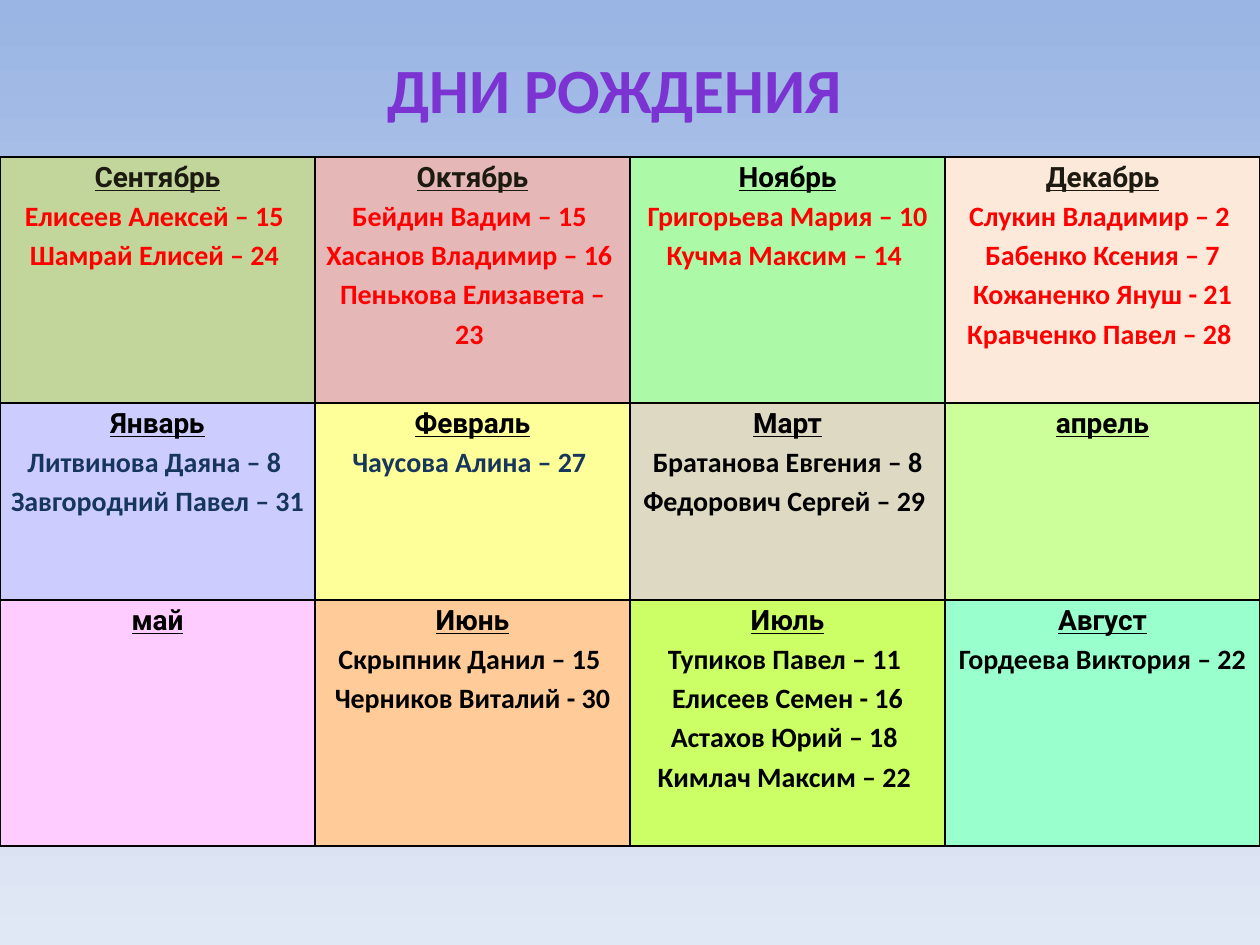
from copy import deepcopy
from dataclasses import dataclass
from lxml.etree import SubElement
from pptx import Presentation
from pptx.dml.color import RGBColor
from pptx.enum.text import MSO_ANCHOR, PP_ALIGN
from pptx.oxml.ns import qn
from pptx.util import Emu, Pt


@dataclass(frozen=True)
class Theme:
    sky: tuple = ((0, "9AB5E4"), (50, "C2D1ED"), (100, "E1E8F5"))
    title: tuple = ((0, "3D1B67"), (43, "7B34D2"), (48, "7330C4"), (100, "3D1B67"))
    ink: str = "000000"
    dark: str = "1D1B11"
    red: str = "FF0000"
    navy: str = "17365D"
    body: str = "Calibri"
    head: str = "Roboto"
    big: int = 36
    small: int = 16
    line: int = 1


T = Theme()

MONTHS = [
    [("Сентябрь", "C2D69B", T.dark, T.red,
      ["Елисеев Алексей – 15 ", "Шамрай Елисей – 24 "]),
     ("Октябрь", "E5B8B7", T.dark, T.red,
      ["Бейдин Вадим – 15 ", "Хасанов Владимир – 16 ", "Пенькова Елизавета – 23 "]),
     ("Ноябрь", "ACFAA8", T.ink, T.red,
      ["Григорьева Мария – 10", "Кучма Максим – 14 "]),
     ("Декабрь", "FDE9D9", T.dark, T.red,
      ["Слукин Владимир – 2 ", "Бабенко Ксения – 7", "Кожаненко Януш - 21",
       "Кравченко Павел – 28 "])],
    [("Январь", "CCCCFF", T.ink, T.navy,
      ["Литвинова Даяна – 8 ", "Завгородний Павел – 31 "]),
     ("Февраль", "FFFF99", T.ink, T.navy, ["Чаусова Алина – 27 "]),
     ("Март", "DDD9C3", T.ink, T.ink,
      ["Братанова Евгения – 8", "Федорович Сергей – 29 "]),
     ("апрель", "CCFF99", T.ink, T.ink, [])],
    [("май", "FFCCFF", T.ink, T.ink, []),
     ("Июнь", "FFCC99", T.ink, T.ink,
      ["Скрыпник Данил – 15 ", "Черников Виталий - 30"]),
     ("Июль", "CCFF66", T.ink, T.ink,
      ["Тупиков Павел – 11 ", "Елисеев Семен - 16", "Астахов Юрий – 18 ",
       "Кимлач Максим – 22 "]),
     ("Август", "99FFCC", T.ink, T.ink, ["Гордеева Виктория – 22"])],
]


def px(n):
    return Emu(round(n * 914400 / 126))


def apply(item, **form):
    for name, value in form.items():
        setattr(item, name, value)


def shade(fill, root, stops):
    fill.gradient()
    fill.gradient_angle = 270
    group = next(root.iter(qn("a:gsLst")))
    while len(group) < len(stops):
        group.append(deepcopy(group[0]))
    for stop, (place, color) in zip(fill.gradient_stops, stops):
        stop.position = place / 100
        stop.color.rgb = RGBColor.from_string(color)


def write(para, text, color=None, **form):
    para.alignment = PP_ALIGN.CENTER
    run = para.add_run()
    run.text = text
    apply(run.font, bold=True, **form)
    if color:
        run.font.color.rgb = RGBColor.from_string(color)
    return run


def edge(cell):
    props = cell._tc.get_or_add_tcPr()
    for side in ("a:lnL", "a:lnR", "a:lnT", "a:lnB"):
        line = SubElement(props, qn(side), w=str(Pt(T.line)))
        fill = SubElement(line, qn("a:solidFill"))
        SubElement(fill, qn("a:srgbClr"), val=T.ink)


def add_title(slide, box, text):
    shape = slide.shapes.add_textbox(*map(px, box))
    frame = shape.text_frame
    apply(frame, word_wrap=True, vertical_anchor=MSO_ANCHOR.MIDDLE)
    run = write(frame.paragraphs[0], text, name=T.body, size=Pt(T.big))
    shade(run.font.fill, shape.element, T.title)


def add_month(cell, name, fill, top, tone, people):
    apply(cell, margin_left=px(8), margin_right=px(8), margin_top=0, margin_bottom=0)
    edge(cell)
    cell.fill.solid()
    cell.fill.fore_color.rgb = RGBColor.from_string(fill)
    frame = cell.text_frame
    size = Pt(T.small)
    write(frame.paragraphs[0], name, top, name=T.head, size=size, underline=True)
    for guest in people:
        write(frame.add_paragraph(), guest, tone, name=T.body, size=size)
    for para in frame.paragraphs:
        para.line_spacing = 1.15


def add_year(slide, box, rows, ratio):
    wide, high = box[2:]
    count = len(rows[0])
    table = slide.shapes.add_table(len(rows), count, *map(px, box)).table
    apply(table, first_row=False, horz_banding=False)
    for col in table.columns:
        col.width = px(wide / count)
    for row, part in zip(table.rows, ratio):
        row.height = px(high * part / sum(ratio))
    for r, row in enumerate(rows):
        for c, month in enumerate(row):
            add_month(table.cell(r, c), *month)


def main():
    deck = Presentation()
    apply(deck, slide_width=px(1260), slide_height=px(945))
    slide = deck.slides.add_slide(deck.slide_layouts[6])
    shade(slide.background.fill, slide.element, T.sky)
    add_year(slide, (0, 157, 1260, 689), MONTHS, (5, 4, 5))
    add_title(slide, (137, 39, 955, 98), "ДНИ РОЖДЕНИЯ")
    deck.save("out.pptx")


if __name__ == "__main__":
    main()
